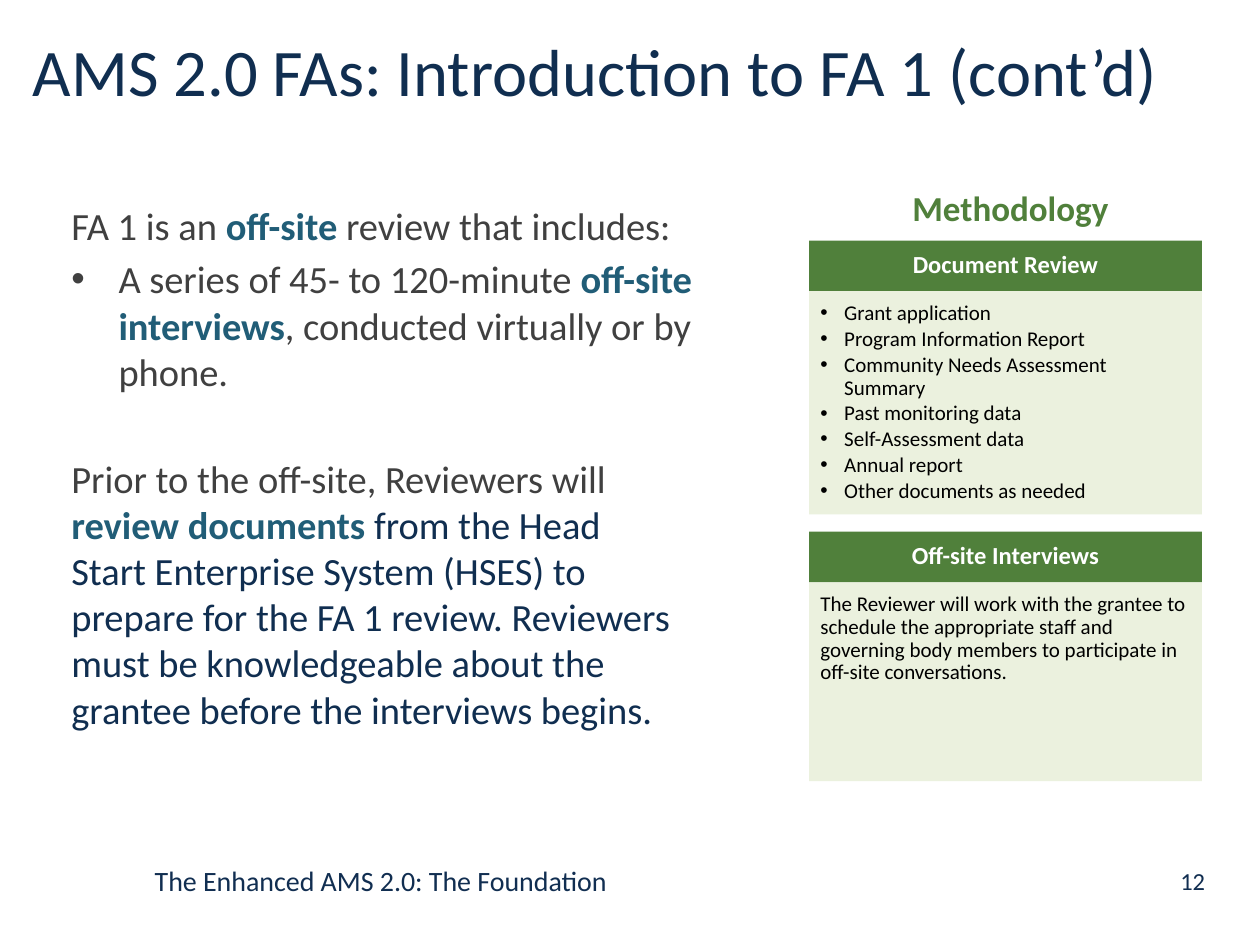
from lxml import etree
from pptx import Presentation
from pptx import util as u
from pptx.dml import color
from pptx.enum import shapes, text
from pptx.oxml import ns

HUES = {"navy": "102E50", "ink": "112E51", "gray": "404040", "teal": "215D77",
        "green": "50803B", "pale": "EBF1DE", "white": "FFFFFF", "black": "000000"}
MID = text.MSO_ANCHOR.MIDDLE
CENTER = text.PP_ALIGN.CENTER


def rgb(hue):
    """Return the named colour."""
    return color.RGBColor.from_string(HUES[hue])


def bullet(para, dent):
    """Give a paragraph a hanging bullet, dent in centimetres."""
    props = para._p.get_or_add_pPr()
    props.set("marL", str(u.Cm(dent)))
    props.set("indent", str(-u.Cm(dent)))
    font = etree.SubElement(props, ns.qn("a:buFont"))
    font.set("typeface", "Arial")
    mark = etree.SubElement(props, ns.qn("a:buChar"))
    mark.set("char", "•")


def write(frame, paras, size, align=None, dent=0, first=0, after=0, lines=None):
    """Fill a frame with paragraphs of (words, hue, bold) runs, with bullets from index first."""
    frame.word_wrap = True
    for i, runs in enumerate(paras):
        para = frame.add_paragraph() if i else frame.paragraphs[0]
        if dent and i >= first:
            bullet(para, dent)
        para.alignment = align or text.PP_ALIGN.LEFT
        para.space_after = u.Pt(after)
        if lines:
            para.line_spacing = lines
        for words, hue, bold in runs:
            run = para.add_run()
            run.text = words
            run.font.name = "Calibri"
            run.font.size = u.Pt(size)
            run.font.bold = bold
            run.font.color.rgb = rgb(hue)


def label(slide, box, paras, size, anchor=text.MSO_ANCHOR.TOP, **style):
    """Add a text box at box, given in centimetres."""
    frame = slide.shapes.add_textbox(*map(u.Cm, box)).text_frame
    frame.vertical_anchor = anchor
    write(frame, paras, size, **style)
    return frame


def panel(slide, box, fill, pads, anchor, paras, size, **style):
    """Add a filled rectangle with text and its own margins."""
    shape = slide.shapes.add_shape(shapes.MSO_SHAPE.RECTANGLE, *map(u.Cm, box))
    shape.shadow.inherit = False
    shape.fill.solid()
    shape.fill.fore_color.rgb = rgb(fill)
    shape.line.fill.background()
    frame = shape.text_frame
    frame.margin_left, frame.margin_top, frame.margin_right, frame.margin_bottom = map(u.Cm, pads)
    frame.vertical_anchor = anchor
    write(frame, paras, size, lines=0.9, **style)


def card(slide, box, head, items, dent=0):
    """Draw a heading bar above a pale body that fills the rest of the box."""
    x, y, w, h = box
    bar = 1.02
    panel(slide, (x, y, w, bar), "green", (0.3, 0.18, 0.3, 0.18), MID,
          [[(head, "white", True)]], 14, align=CENTER)
    panel(slide, (x, y + bar, w, h - bar), "pale", (0.23, 0.23, 0.3, 0.33), text.MSO_ANCHOR.TOP,
          [[(item, "black", False)] for item in items], 12, dent=dent, after=1.8)


def methods(slide, box):
    """Draw the methodology column with its two cards."""
    x, y, w, h = box
    label(slide, (x + 0.2, y, w - 0.2, 1.12), [[("Methodology", "green", True)]], 20, align=CENTER)
    card(slide, (x, y + 1.22, w, 5.52), "Document Review",
         ["Grant application", "Program Information Report",
          "Community Needs Assessment Summary", "Past monitoring data",
          "Self-Assessment data", "Annual report", "Other documents as needed"], 0.48)
    card(slide, (x, y + 7.09, w, h - 7.09), "Off-site Interviews",
         ["The Reviewer will work with the grantee to schedule the appropriate staff and "
          "governing body members to participate in off-site conversations."])


def story(slide, box):
    """Write the review description on the left."""
    x, y, w, h = box
    frame = label(slide, (x, y, w, 5), [
        [("FA 1 is an ", "gray", False), ("off-site", "teal", True),
         (" review that includes:", "gray", False)],
        [("A series of 45- to 120-minute ", "gray", False), ("off-site interviews", "teal", True),
         (", conducted virtually or by phone.", "gray", False)]], 22, dent=0.95, first=1)
    frame.paragraphs[1].space_before = u.Pt(4.4)
    label(slide, (x, y + 5.1, w - 1.16, h - 5.1), [
        [("Prior to the off-site, Reviewers will ", "gray", False),
         ("review documents ", "teal", True),
         ("from the Head Start Enterprise System (HSES) to prepare for the FA 1 review. "
          "Reviewers must be knowledgeable about the grantee before the interviews begins.",
          "navy", False)]], 22)


def footer(slide, box):
    """Write the deck name and the page number."""
    x, y, w, h = box
    label(slide, (x, y, 18.42, h), [[("The Enhanced AMS 2.0: The Foundation", "ink", False)]],
          16, anchor=MID)
    label(slide, (x + w - 2.11, y, 2.11, h), [[("12", "ink", False)]], 14, anchor=MID, align=CENTER)


def main():
    """Build and save the slide."""
    deck = Presentation()
    deck.slide_width, deck.slide_height = u.Cm(25.4), u.Cm(19.05)
    slide = deck.slides.add_slide(deck.slide_layouts[6])
    label(slide, (0.41, 0.36, 24.56, 2.11),
          [[("AMS 2.0 FAs: Introduction to FA 1 (cont’d)", "navy", False)]], 38, anchor=MID)
    story(slide, (1.19, 3.94, 13.94, 10.99))
    methods(slide, (16.31, 3.63, 7.92, 12.12))
    footer(slide, (2.87, 17.2, 22.23, 1.1))
    deck.save("out.pptx")


if __name__ == "__main__":
    main()
